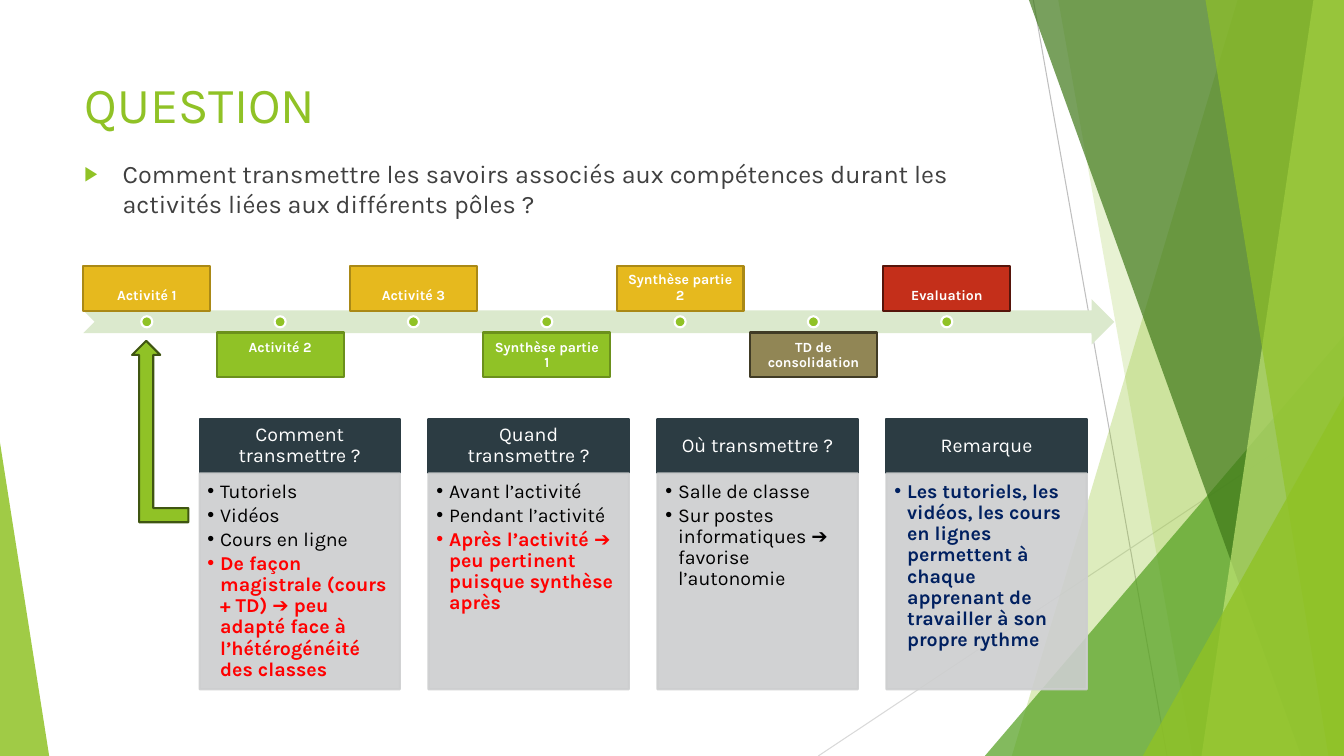
from lxml import etree
from pptx import Presentation
from pptx.dml.color import RGBColor
from pptx.enum.shapes import MSO_CONNECTOR, MSO_SHAPE
from pptx.enum.text import MSO_ANCHOR, PP_ALIGN
from pptx.oxml.ns import qn
from pptx.util import Cm, Pt

RECT, OVAL = MSO_SHAPE.RECTANGLE, MSO_SHAPE.OVAL
TRIANGLE = MSO_SHAPE.ISOSCELES_TRIANGLE
TIME_ARROW = MSO_SHAPE.NOTCHED_RIGHT_ARROW
BENT_ARROW = MSO_SHAPE.BENT_UP_ARROW
STRAIGHT = MSO_CONNECTOR.STRAIGHT
TOP, MIDDLE, BOTTOM = MSO_ANCHOR.TOP, MSO_ANCHOR.MIDDLE, MSO_ANCHOR.BOTTOM
LEFT, CENTER = PP_ALIGN.LEFT, PP_ALIGN.CENTER

FONT = "Karla"
WIDTH, HEIGHT = 33.87, 19.05
GREEN, WHITE, BLACK, RED, NAVY = "90C226", "FFFFFF", "000000", "FF0000", "002060"
SLATE, GREY = "2C3C43", "CDCECF"
AMBER_TAG, GREEN_TAG = ("E6B91E", "AA8916"), (GREEN, "6B901C")
OLIVE_TAG, RED_TAG = ("918655", "403B25"), ("C42F1A", "56150B")

# Top-left x, bottom-left x, colour, opacity; each runs to the right edge
BACK_SLICES = [(31.19, 25.5, GREEN, 30), (26.67, 30.05, GREEN, 20)]
FRONT_SLICES = [(25.93, 32.79, "3F7819", 70), (33.1, 30.28, "C0E474", 70),
                (30.38, 33.48, GREEN, 65)]

STEPS = [("Activité 1", AMBER_TAG), ("Activité 2", GREEN_TAG),
         ("Activité 3", AMBER_TAG), ("Synthèse partie 1", GREEN_TAG),
         ("Synthèse partie 2", AMBER_TAG), ("TD de consolidation", OLIVE_TAG),
         ("Evaluation", RED_TAG)]

# Heading, then bullets as text, colour, bold
COLUMNS = [
    ("Comment transmettre ?", [
        ("Tutoriels", BLACK, False),
        ("Vidéos", BLACK, False),
        ("Cours en ligne", BLACK, False),
        ("De façon magistrale (cours + TD) ➔ peu adapté face à "
         "l’hétérogénéité des classes", RED, True)]),
    ("Quand transmettre ?", [
        ("Avant l’activité", BLACK, False),
        ("Pendant l’activité", BLACK, False),
        ("Après l’activité ➔ peu pertinent puisque synthèse après", RED, True)]),
    ("Où transmettre ?", [
        ("Salle de classe", BLACK, False),
        ("Sur postes informatiques ➔ favorise l’autonomie", BLACK, False)]),
    ("Remarque", [
        ("Les tutoriels, les vidéos, les cours en lignes permettent à chaque "
         "apprenant de travailler à son propre rythme", NAVY, True)]),
]


def rgb(colour):
    return RGBColor.from_string(colour)


def set_opacity(fill, percent):
    colour = fill._xPr.find(qn("a:solidFill"))[0]
    etree.SubElement(colour, qn("a:alpha"), val=str(percent * 1000))


def paint(shape, colour, line=None, opacity=100):
    shape.shadow.inherit = False
    shape.fill.solid()
    shape.fill.fore_color.rgb = rgb(colour)
    if line:
        shape.line.color.rgb = rgb(line)
        shape.line.width = Pt(1.5)
    else:
        shape.line.fill.background()
    if opacity < 100:
        set_opacity(shape.fill, opacity)
        if line:
            set_opacity(shape.line.fill, opacity)


def add_block(page, kind, box, colour, line=None, opacity=100):
    block = page.shapes.add_shape(kind, *map(Cm, box))
    paint(block, colour, line, opacity)
    return block


def set_frame(frame, anchor, insets):
    frame.word_wrap = True
    frame.vertical_anchor = anchor
    (frame.margin_left, frame.margin_top,
     frame.margin_right, frame.margin_bottom) = map(Cm, insets)


def set_para(para, text, size, colour, bold=False, align=LEFT, spacing=0.9):
    para.text = text
    para.alignment = align
    para.line_spacing = spacing
    font = para.font
    font.name, font.size, font.bold = FONT, Pt(size), bold
    font.color.rgb = rgb(colour)


def set_bullet(para, char, colour, indent, percent=100):
    props = para._p.get_or_add_pPr()
    props.set("marL", str(Cm(indent)))
    props.set("indent", str(-Cm(indent)))
    bullet_colour = etree.Element(qn("a:buClr"))
    etree.SubElement(bullet_colour, qn("a:srgbClr"), val=colour)
    parts = [bullet_colour,
             etree.Element(qn("a:buSzPct"), val=str(percent * 1000)),
             etree.Element(qn("a:buFont"), typeface="Arial"),
             etree.Element(qn("a:buChar"), char=char)]
    defaults = props.find(qn("a:defRPr"))
    for part in parts:
        defaults.addprevious(part)


def add_thin_line(page, ends, colour):
    line = page.shapes.add_connector(STRAIGHT, *map(Cm, ends))
    line.line.color.rgb = rgb(colour)
    line.line.width = Pt(0.75)
    etree.SubElement(line._element.spPr, qn("a:effectLst"))


def add_slices(page, width, height, slices):
    for top_x, bottom_x, colour, opacity in slices:
        builder = page.shapes.build_freeform(Cm(top_x), 0)
        builder.add_line_segments([(Cm(width), 0), (Cm(width), Cm(height)),
                                   (Cm(bottom_x), Cm(height))])
        paint(builder.convert_to_shape(), colour, opacity=opacity)


def add_corner(page, box, tip, colour, opacity):
    corner = add_block(page, TRIANGLE, box, colour, opacity=opacity)
    corner.adjustments[0] = tip


def add_decoration(page, width, height):
    add_thin_line(page, (26.04, 0, 29.41, height), "BFBFBF")
    add_thin_line(page, (width, 10.24, 20.62, height), "D9D9D9")
    add_slices(page, width, height, BACK_SLICES)
    add_corner(page, (24.82, 8.46, width - 24.82, height - 8.46), 1, "54A021", 72)
    add_slices(page, width, height, FRONT_SLICES)
    add_corner(page, (28.8, 9.98, width - 28.8, height - 9.98), 1, GREEN, 80)
    add_corner(page, (0, 11.15, 1.24, height - 11.15), 0, GREEN, 85)


def add_heading(page, left, top, width):
    title = page.shapes.title
    title.left, title.top, title.width, title.height = map(
        Cm, (left, top, width, 3.66))
    set_frame(title.text_frame, TOP, (0.25, 0.13, 0.25, 0.13))
    set_para(title.text_frame.paragraphs[0], "QUESTION", 36, GREEN, spacing=1.0)

    question = page.shapes.add_textbox(*map(Cm, (left, top + 2.16, width, 2.16)))
    set_frame(question.text_frame, TOP, (0.25, 0.13, 0.25, 0.13))
    para = question.text_frame.paragraphs[0]
    set_para(para, "Comment transmettre les savoirs associés aux compétences "
             "durant les activités liées aux différents pôles ?",
             18, "404040", spacing=1.0)
    para.space_before = Pt(10)
    set_bullet(para, "▶", GREEN, 0.96, 80)


def add_timeline(page, left, top, width, height):
    add_block(page, TIME_ARROW, (left, top, width, height), "DBE9CD")
    pitch, tag_width, tag_height, gap, dot = 3.36, 3.2, 1.13, 0.27, 0.28
    middle = top + height / 2
    for i, (label, (colour, line)) in enumerate(STEPS):
        above = i % 2 == 0
        x = left + i * pitch
        y = middle - gap - tag_height if above else middle + gap
        tag = add_block(page, RECT, (x, y, tag_width, tag_height), colour, line)
        set_frame(tag.text_frame, BOTTOM if above else TOP, (0.2,) * 4)
        set_para(tag.text_frame.paragraphs[0], label, 10, WHITE, True, CENTER)
        add_block(page, OVAL, (x + (tag_width - dot) / 2, middle - dot / 2, dot, dot),
                  GREEN, WHITE)


def add_link_arrow(page, box):
    arrow = add_block(page, BENT_ARROW, box, GREEN, "3F5511")
    arrow._element.spPr.xfrm.set("flipH", "1")


def add_columns(page, left, top):
    pitch, width, head_height, body_height = 5.77, 5.05, 1.38, 5.44
    for i, (heading, bullets) in enumerate(COLUMNS):
        x = left + i * pitch
        head = add_block(page, RECT, (x, top, width, head_height), SLATE, SLATE)
        set_frame(head.text_frame, MIDDLE, (0.28, 0.15, 0.28, 0.15))
        set_para(head.text_frame.paragraphs[0], heading, 14, WHITE, align=CENTER)

        body = add_block(page, RECT, (x, top + head_height, width, body_height),
                         GREY, GREY, 90)
        frame = body.text_frame
        set_frame(frame, TOP, (0.2, 0.2, 0.28, 0.3))
        for j, (text, colour, bold) in enumerate(bullets):
            para = frame.add_paragraph() if j else frame.paragraphs[0]
            set_para(para, text, 14, colour, bold)
            para.space_after = Pt(2)
            set_bullet(para, "•", colour, 0.32)


def main():
    deck = Presentation()
    deck.slide_width, deck.slide_height = Cm(WIDTH), Cm(HEIGHT)
    page = deck.slides.add_slide(deck.slide_layouts[5])
    add_decoration(page, WIDTH, HEIGHT)
    add_heading(page, 1.88, 1.7, 23.88)
    add_timeline(page, 2.1, 7.54, 25.98, 1.14)
    add_link_arrow(page, (3.33, 8.59, 1.42, 4.57))
    add_columns(page, 5.03, 10.55)
    deck.save("out.pptx")


if __name__ == "__main__":
    main()
